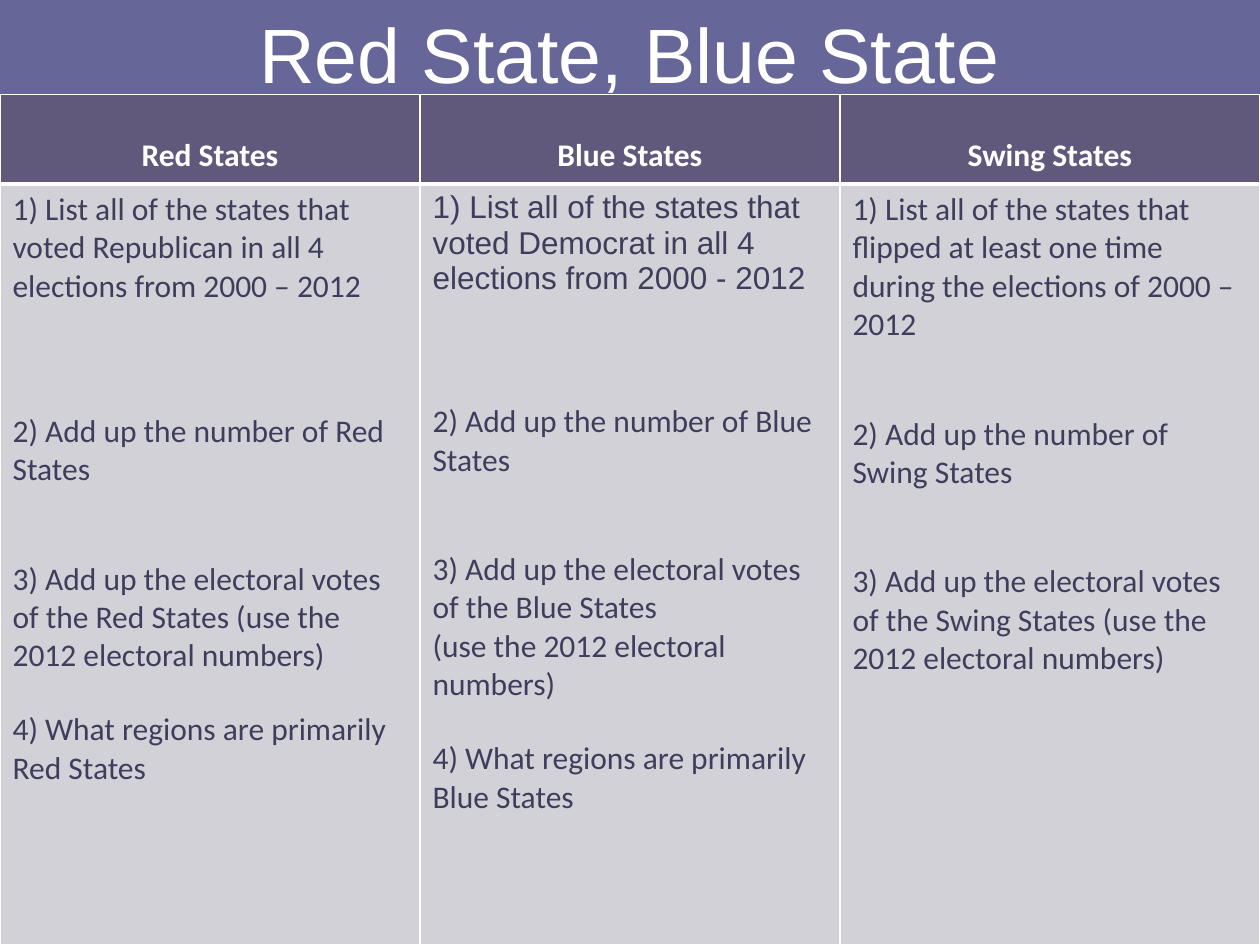
from lxml import etree
from pptx import Presentation
from pptx.dml.color import RGBColor
from pptx.enum import text
from pptx.oxml import ns
from pptx.util import Inches, Pt

BACKGROUND = RGBColor(0x66, 0x66, 0x99)
HEADER = RGBColor(0x60, 0x59, 0x7B)
BODY = RGBColor(0xD2, 0xD1, 0xD7)
INK = RGBColor(0x3E, 0x3E, 0x5C)
WHITE = RGBColor(0xFF, 0xFF, 0xFF)
GAP = 20.3

COLUMNS = [
    ("Red States", [
        ("1) List all of the states that voted Republican in all 4 elections from 2000 – 2012", 0, "Calibri"),
        ("2) Add up the number of Red States", 3, "Calibri"),
        ("3) Add up the electoral votes of the Red States (use the 2012 electoral numbers)", 2, "Calibri"),
        ("4) What regions are primarily Red States", 1, "Calibri"),
    ]),
    ("Blue States", [
        ("1) List all of the states that voted Democrat in all 4 elections from 2000 - 2012", 0, "Arial"),
        ("2) Add up the number of Blue States", 3, "Calibri"),
        ("3) Add up the electoral votes of the Blue States", 2, "Calibri"),
        ("(use the 2012 electoral numbers)", 0, "Calibri"),
        ("4) What regions are primarily Blue States", 1, "Calibri"),
    ]),
    ("Swing States", [
        ("1) List all of the states that flipped at least one time during the elections of 2000 – 2012", 0, "Calibri"),
        ("2) Add up the number of Swing States", 2, "Calibri"),
        ("3) Add up the electoral votes of the Swing States (use the 2012 electoral numbers)", 2, "Calibri"),
    ]),
]


def add_run(p, words, size, font, color, bold=False):
    r = p.add_run()
    r.text = words
    r.font.size = Pt(size)
    r.font.name = font
    r.font.color.rgb = color
    r.font.bold = bold


def style_cell(cell, color, top, bottom):
    tc_pr = cell._tc.get_or_add_tcPr()
    for side, width in (("L", 1), ("R", 1), ("T", top), ("B", bottom)):
        ln = etree.SubElement(tc_pr, ns.qn("a:ln" + side), w=str(Pt(width)))
        fill = etree.SubElement(ln, ns.qn("a:solidFill"))
        etree.SubElement(fill, ns.qn("a:srgbClr"), val=str(WHITE))
    cell.fill.solid()
    cell.fill.fore_color.rgb = color


prs = Presentation()
prs.slide_width = Inches(10)
prs.slide_height = Inches(7.5)
s = prs.slides.add_slide(prs.slide_layouts[6])
s.background.fill.solid()
s.background.fill.fore_color.rgb = BACKGROUND

title = s.shapes.add_textbox(0, 0, Inches(10), Inches(0.83))
tf = title.text_frame
tf.word_wrap = True
tf.vertical_anchor = text.MSO_ANCHOR.MIDDLE
p = tf.paragraphs[0]
p.alignment = text.PP_ALIGN.CENTER
add_run(p, "Red State, Blue State", 44, "Arial", WHITE)

table = s.shapes.add_table(2, len(COLUMNS), 0, Inches(0.75), Inches(10), Inches(6.75)).table
table.first_row = False
table.horz_banding = False
table.rows[0].height = Inches(0.71)
table.rows[1].height = Inches(6.04)

for i, (heading, tasks) in enumerate(COLUMNS):
    table.columns[i].width = Inches(10 / len(COLUMNS))

    head = table.cell(0, i)
    style_cell(head, HEADER, 1, 3)
    head.margin_top = Inches(0.33)
    p = head.text_frame.paragraphs[0]
    p.alignment = text.PP_ALIGN.CENTER
    add_run(p, heading, 18, "Calibri", WHITE, True)

    body = table.cell(1, i)
    style_cell(body, BODY, 3, 1)
    tf = body.text_frame
    for n, (words, gaps, font) in enumerate(tasks):
        p = tf.add_paragraph() if n else tf.paragraphs[0]
        p.space_before = Pt(gaps * GAP)
        add_run(p, words, 18, font, INK)

prs.save("out.pptx")
